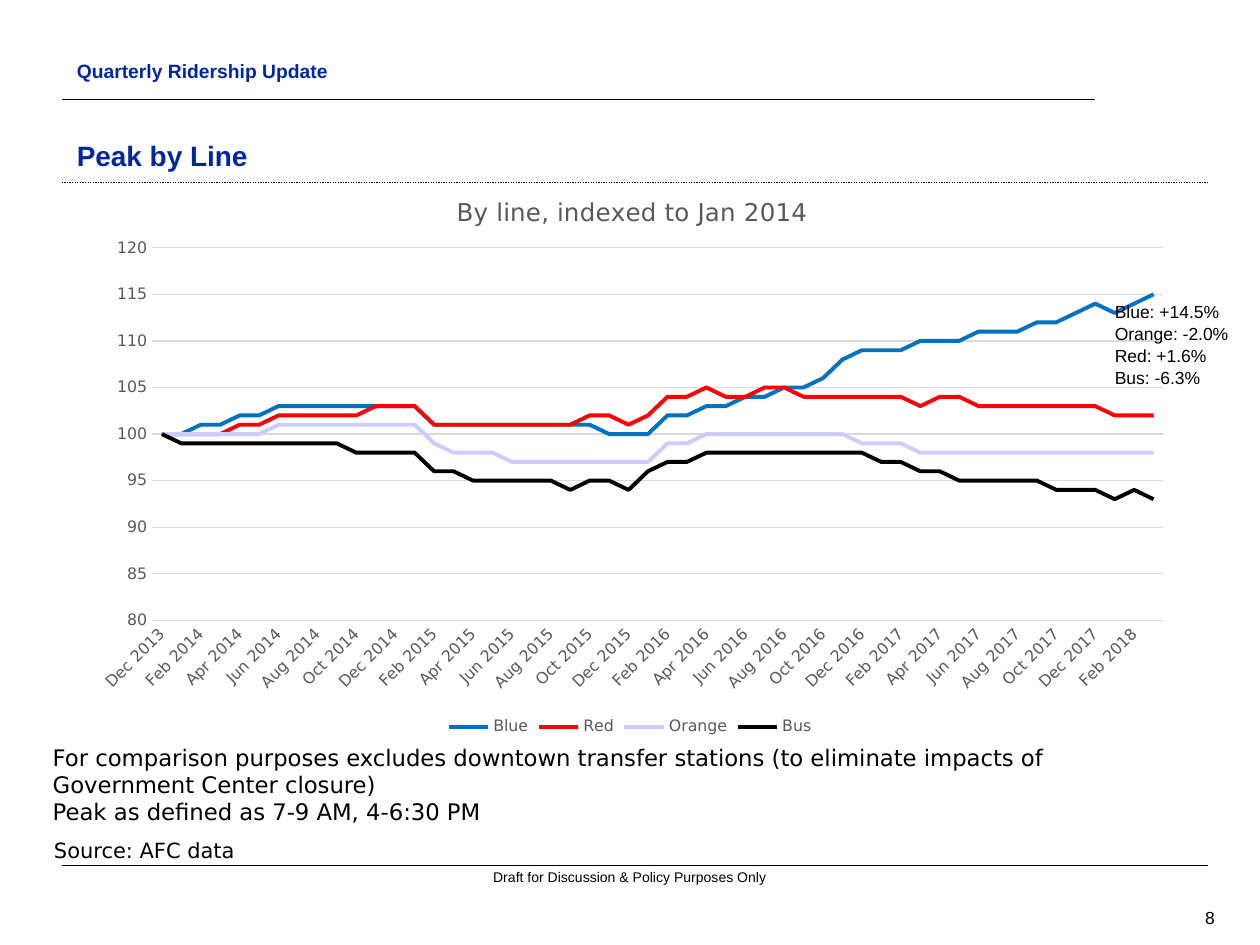
"""Build the slide on peak ridership by line."""
from lxml import etree
from pptx import Presentation
from pptx import util as u
from pptx.chart.data import CategoryChartData
from pptx.dml.color import RGBColor
from pptx.enum import chart as ch, dml, shapes, text
from pptx.oxml import ns

NAVY = RGBColor(0x00, 0x26, 0x9E)
BLACK = RGBColor(0x00, 0x00, 0x00)
GRAY = RGBColor(0x59, 0x59, 0x59)
PALE = RGBColor(0xD9, 0xD9, 0xD9)
BLUE = RGBColor(0x00, 0x70, 0xC0)
RED = RGBColor(0xFF, 0x00, 0x00)
LILAC = RGBColor(0xCC, 0xCC, 0xFF)
SANS, WIDE = "Arial", "DejaVu Sans"

MONTHS = "Jan Feb Mar Apr May Jun Jul Aug Sep Oct Nov Dec".split()
DATES = [f"{MONTHS[n % 12]} {2013 + n // 12}" for n in range(11, 63)]
LINES = {
    "Blue": (BLUE, [
        100, 100, 101, 101, 102, 102, 103, 103, 103, 103, 103, 103, 103,
        103, 101, 101, 101, 101, 101, 101, 101, 101, 101, 100, 100, 100,
        102, 102, 103, 103, 104, 104, 105, 105, 106, 108, 109, 109, 109,
        110, 110, 110, 111, 111, 111, 112, 112, 113, 114, 113, 114, 115]),
    "Red": (RED, [
        100, 100, 100, 100, 101, 101, 102, 102, 102, 102, 102, 103, 103,
        103, 101, 101, 101, 101, 101, 101, 101, 101, 102, 102, 101, 102,
        104, 104, 105, 104, 104, 105, 105, 104, 104, 104, 104, 104, 104,
        103, 104, 104, 103, 103, 103, 103, 103, 103, 103, 102, 102, 102]),
    "Orange": (LILAC, [
        100, 100, 100, 100, 100, 100, 101, 101, 101, 101, 101, 101, 101,
        101, 99, 98, 98, 98, 97, 97, 97, 97, 97, 97, 97, 97,
        99, 99, 100, 100, 100, 100, 100, 100, 100, 100, 99, 99, 99,
        98, 98, 98, 98, 98, 98, 98, 98, 98, 98, 98, 98, 98]),
    "Bus": (BLACK, [
        100, 99, 99, 99, 99, 99, 99, 99, 99, 99, 98, 98, 98,
        98, 96, 96, 95, 95, 95, 95, 95, 94, 95, 95, 94, 96,
        97, 97, 98, 98, 98, 98, 98, 98, 98, 98, 98, 97, 97,
        96, 96, 95, 95, 95, 95, 95, 94, 94, 94, 93, 94, 93]),
}


def style(font, size, color=GRAY, name=WIDE, bold=False):
    """Set the look of a font."""
    font.size, font.name, font.bold = u.Pt(size), name, bold
    font.color.rgb = color


def write(frame, words, size=10, color=BLACK, name=SANS, bold=False,
          align=text.PP_ALIGN.LEFT, gap=1.0):
    """Fill a text frame, one paragraph for each line of words."""
    for i, line in enumerate(words.split("\n")):
        para = frame.paragraphs[0] if i == 0 else frame.add_paragraph()
        props = para._p.get_or_add_pPr()
        props.set("marL", "0")
        props.set("indent", "0")
        etree.SubElement(props, ns.qn("a:buNone"))
        para.alignment, para.line_spacing = align, gap
        para.space_before = u.Pt(0)
        run = para.add_run()
        run.text = line
        style(run.font, size, color, name, bold)


def place(parent, x, y, w=None, h=None):
    """Give a chart part a fixed spot, in shares of the chart."""
    old = parent.find(ns.qn("c:layout"))
    if old is None:
        old = etree.Element(ns.qn("c:layout"))
        head = parent.find(ns.qn("c:tx"))
        parent.insert(0 if head is None else 1, old)
    box = etree.SubElement(old, ns.qn("c:manualLayout"))
    items = [("xMode", "edge"), ("yMode", "edge"),
             ("x", x), ("y", y), ("w", w), ("h", h)]
    if w:
        items.insert(0, ("layoutTarget", "inner"))
    for tag, val in items:
        if val is not None:
            etree.SubElement(box, ns.qn(f"c:{tag}")).set("val", str(val))


class Page:
    """Hold the current slide and add elements to it."""

    def __init__(self, deck):
        self.slide = deck.slides.add_slide(deck.slide_layouts[1])
        self.shapes = self.slide.shapes

    def rule(self, y, end, width=0.75, dash=None):
        """Draw a level line from the left margin."""
        line = self.shapes.add_connector(
            shapes.MSO_CONNECTOR.STRAIGHT, u.Inches(0.49), u.Inches(y),
            u.Inches(end), u.Inches(y))
        line.line.color.rgb, line.line.width = BLACK, u.Pt(width)
        if dash:
            line.line.dash_style = dash
        etree.SubElement(line._element.spPr, ns.qn("a:effectLst"))

    def hold(self, index, box, words, anchor, **form):
        """Move and fill a placeholder."""
        shape = self.slide.placeholders[index]
        shape.left, shape.top, shape.width, shape.height = map(u.Inches, box)
        frame = shape.text_frame
        frame.auto_size = text.MSO_AUTO_SIZE.NONE
        frame.vertical_anchor = anchor
        write(frame, words, color=NAVY, bold=True, **form)

    def note(self, box, words, anchor=text.MSO_ANCHOR.TOP, inset=None, **form):
        """Add a text box."""
        frame = self.shapes.add_textbox(*map(u.Inches, box)).text_frame
        frame.word_wrap, frame.vertical_anchor = True, anchor
        if inset is not None:
            frame.margin_left = frame.margin_right = u.Inches(inset)
            frame.margin_top = frame.margin_bottom = u.Inches(inset)
        write(frame, words, **form)

    def chart(self, box, title, dates, lines):
        """Add the line chart."""
        data = CategoryChartData(number_format="0")
        data.categories = dates
        for name, (_, vals) in lines.items():
            data.add_series(name, vals)
        chart = self.shapes.add_chart(
            ch.XL_CHART_TYPE.LINE, *map(u.Inches, box), data).chart
        style(chart.font, 10, BLACK)
        plot = chart.plots[0]
        plot.vary_by_categories = False
        for part, (color, _) in zip(plot.series, lines.values()):
            part.smooth = False
            part.format.line.color.rgb = color
            part.format.line.width = u.Pt(2.25)

        chart.has_title = True
        write(chart.chart_title.text_frame, title, 14, GRAY, WIDE,
              align=text.PP_ALIGN.CENTER)
        chart.has_legend = True
        chart.legend.position = ch.XL_LEGEND_POSITION.BOTTOM
        chart.legend.include_in_layout = False
        style(chart.legend.font, 9)

        cat, val = chart.category_axis, chart.value_axis
        for axis in (cat, val):
            axis.major_tick_mark = axis.minor_tick_mark = ch.XL_TICK_MARK.NONE
            style(axis.tick_labels.font, 9)
        val.minimum_scale, val.maximum_scale, val.major_unit = 80, 120, 5
        val.format.line.fill.background()
        for line in (cat.format.line, val.major_gridlines.format.line):
            line.color.rgb, line.width = PALE, u.Pt(0.75)
        root = cat._element
        root.find(ns.qn("c:txPr")).find(ns.qn("a:bodyPr")).set(
            "rot", str(-45 * 60000))
        skip = etree.Element(ns.qn("c:tickLblSkip"))
        skip.set("val", "2")
        root.find(ns.qn("c:noMultiLvlLbl")).addprevious(skip)
        place(chart.chart_title._element, 0.34, 0.04)
        place(plot._element.getparent(), 0.07, 0.14, 0.91, 0.65)


def main():
    """Build and save the slide."""
    deck = Presentation()
    deck.slide_width, deck.slide_height = u.Inches(10), u.Inches(7.5)
    page = Page(deck)
    page.rule(0.79, 8.69, 1)
    page.rule(1.45, 9.59, dash=dml.MSO_LINE.ROUND_DOT)
    page.rule(6.87, 9.59)
    page.note((8.91, 7.16, 0.83, 0.25), "8", text.MSO_ANCHOR.MIDDLE,
              align=text.PP_ALIGN.RIGHT)
    page.note((3.57, 6.89, 2.86, 0.13),
              "Draft for Discussion & Policy Purposes Only",
              inset=0, size=8, align=text.PP_ALIGN.CENTER)
    page.hold(1, (0.51, 0.42, 3.41, 0.25), "Quarterly Ridership Update",
              text.MSO_ANCHOR.TOP, size=11)
    page.hold(0, (0.51, 0.91, 9.33, 0.51), "Peak by Line",
              text.MSO_ANCHOR.BOTTOM, size=16)
    page.note((0.33, 6.6, 8.99, 0.3), "Source: AFC data", size=12, name=WIDE)
    page.note((0.32, 5.85, 9.01, 0.76),
              "For comparison purposes excludes downtown transfer stations "
              "(to eliminate impacts of Government Center closure)\n"
              "Peak as defined as 7-9 AM, 4-6:30 PM", size=13, name=WIDE)
    page.chart((0.59, 1.33, 8.82, 4.55), "By line, indexed to Jan 2014",
               DATES, LINES)
    page.note((8.75, 2.33, 1.17, 0.77),
              "Blue: +14.5%\nOrange: -2.0%\nRed: +1.6%\nBus: -6.3%", gap=1.05)
    deck.save("out.pptx")


if __name__ == "__main__":
    main()
